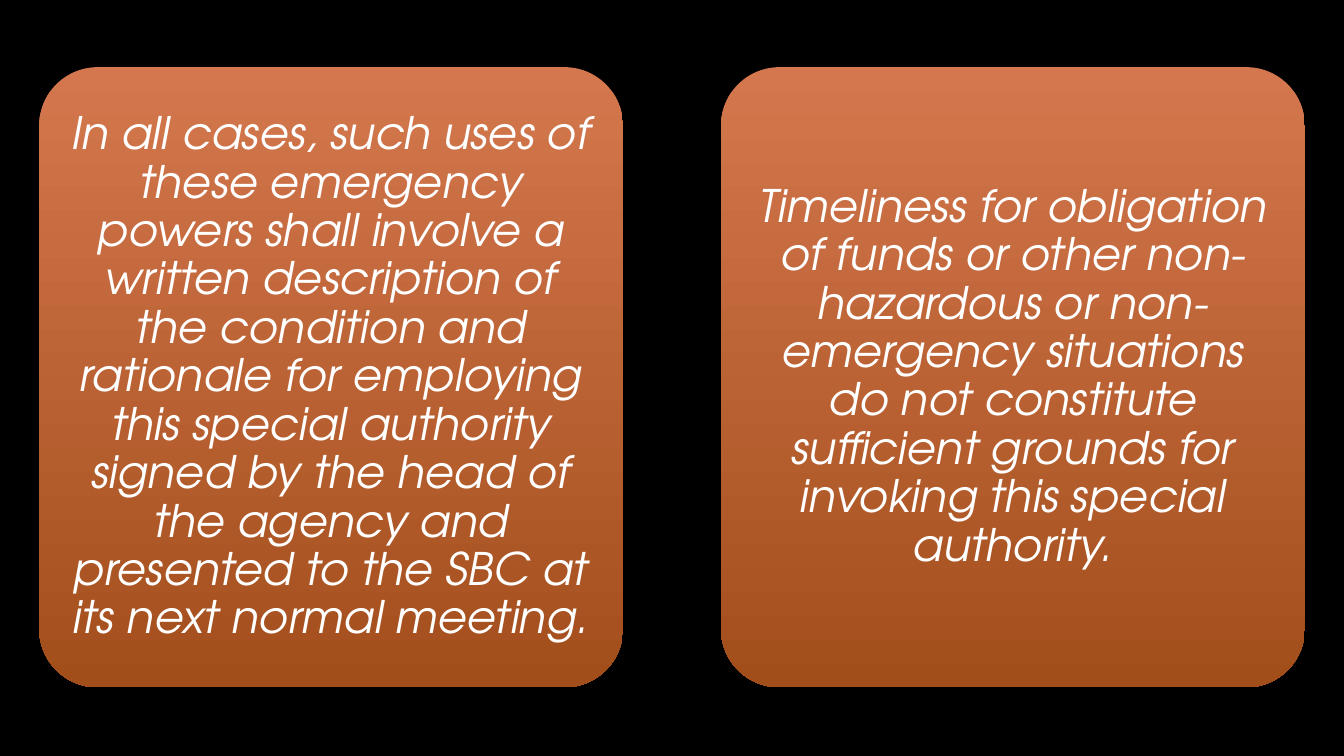
from pptx import Presentation
from pptx.dml.color import RGBColor
from pptx.enum.shapes import MSO_SHAPE
from pptx.enum.text import MSO_ANCHOR, PP_ALIGN
from pptx.util import Pt

ROUNDED = MSO_SHAPE.ROUNDED_RECTANGLE
MIDDLE = MSO_ANCHOR.MIDDLE
CENTER = PP_ALIGN.CENTER

STATEMENTS = [
    "In all cases, such uses of these emergency powers shall involve a written "
    "description of the condition and rationale for employing this special "
    "authority signed by the head of the agency and presented to the SBC at "
    "its next normal meeting.",
    "Timeliness for obligation of funds or other non-hazardous or "
    "non-emergency situations do not constitute sufficient grounds for "
    "invoking this special authority.",
]

THEME = {
    "background": RGBColor.from_string("000000"),
    "gradient": [RGBColor.from_string(code) for code in ("D4774E", "A24E1B")],
    "text": RGBColor.from_string("FFFFFF"),
    "font": "TeX Gyre Adventor",
    "size": Pt(32),
}

SLIDE_WIDTH, SLIDE_HEIGHT = 960, 540
MARGIN = 28
CARD_WIDTH, CARD_HEIGHT = 417, 443
CARD_TOP = 48
CORNER = 0.1
INSET = Pt(9.6)


def apply(target, values):
    for name, value in values.items():
        setattr(target, name, value)


def add_card(page, left, statement):
    card = page.shapes.add_shape(
        ROUNDED, Pt(left), Pt(CARD_TOP), Pt(CARD_WIDTH), Pt(CARD_HEIGHT))
    card.adjustments[0] = CORNER
    card.shadow.inherit = False
    card.line.fill.background()
    card.fill.gradient()
    card.fill.gradient_angle = 270
    for stop, position, color in zip(card.fill.gradient_stops, (0, 1), THEME["gradient"]):
        stop.position = position
        stop.color.rgb = color

    frame = card.text_frame
    apply(frame, {
        "word_wrap": True, "vertical_anchor": MIDDLE,
        "margin_left": INSET, "margin_right": INSET,
        "margin_top": INSET, "margin_bottom": INSET,
    })
    para = frame.paragraphs[0]
    apply(para, {"alignment": CENTER, "line_spacing": 0.9})
    span = para.add_run()
    span.text = statement
    apply(span.font, {"name": THEME["font"], "size": THEME["size"], "italic": True})
    span.font.color.rgb = THEME["text"]


def main():
    deck = Presentation()
    apply(deck, {"slide_width": Pt(SLIDE_WIDTH), "slide_height": Pt(SLIDE_HEIGHT)})
    page = deck.slides.add_slide(deck.slide_layouts[6])
    page.background.fill.solid()
    page.background.fill.fore_color.rgb = THEME["background"]

    step = (SLIDE_WIDTH - 2 * MARGIN - CARD_WIDTH) / (len(STATEMENTS) - 1)
    for index, statement in enumerate(STATEMENTS):
        add_card(page, MARGIN + index * step, statement)
    deck.save("out.pptx")


if __name__ == "__main__":
    main()
